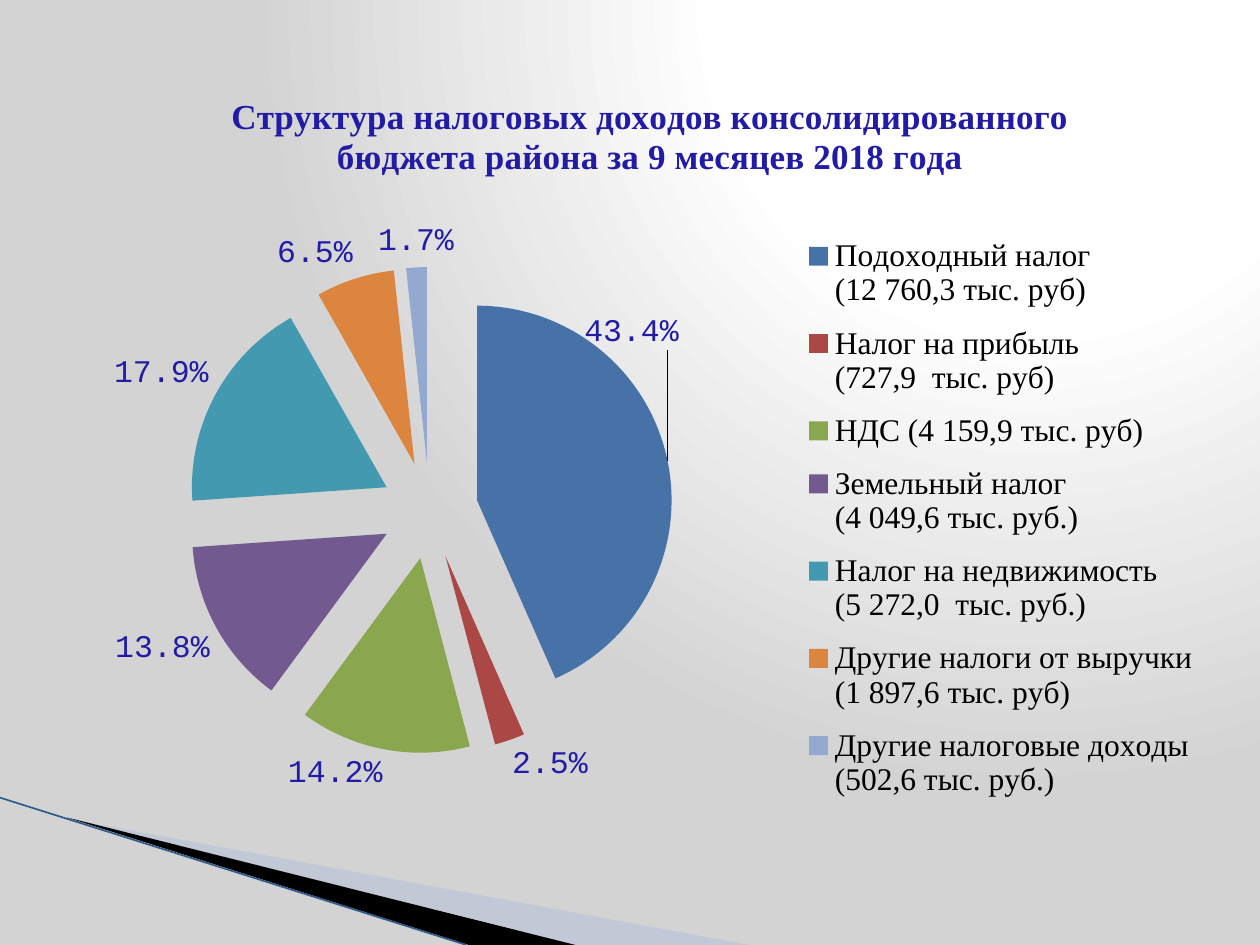
from lxml import etree
from pptx import Presentation
from pptx import util as u
from pptx.chart import data
from pptx.dml import color
from pptx.enum import chart as ch, shapes
from pptx.oxml import parse_xml
from pptx.oxml.ns import nsdecls, qn

TITLE = "Структура налоговых доходов консолидированного бюджета района за 9 месяцев 2018 года"
TAXES = [
    ("Подоходный налог\n(12 760,3 тыс. руб)", 0.434, "4672A8"),
    ("Налог на прибыль\n(727,9  тыс. руб)", 0.025, "AB4744"),
    ("НДС (4 159,9 тыс. руб)", 0.142, "8AA64F"),
    ("Земельный налог\n(4 049,6 тыс. руб.)", 0.138, "725990"),
    ("Налог на недвижимость\n(5 272,0  тыс. руб.)", 0.179, "4299B0"),
    ("Другие налоги от выручки\n(1 897,6 тыс. руб)", 0.065, "DC853E"),
    ("Другие налоговые доходы\n(502,6 тыс. руб.)", 0.017, "93A9CF"),
]
NAVY = "221BA5"
SERIF = "Times New Roman"
MONO = "Courier New"


def rgb(code):
    """Turn a hex string into a colour."""
    return color.RGBColor.from_string(code)


def style(font, name, size, code, bold=False):
    """Set the face, size and colour of a font."""
    font.name, font.size, font.bold = name, u.Pt(size), bold
    font.color.rgb = rgb(code)


def glow(slide):
    """Fill the background with a round white to grey gradient."""
    slide.background.fill.gradient()
    old = slide.background.fill._xPr.find(qn("a:gradFill"))
    stops = "".join(
        f'<a:gs pos="{pos}000"><a:srgbClr val="{code}"/></a:gs>'
        for pos, code in ((0, "FFFFFF"), (40, "FFFFFF"), (100, "D3D3D3")))
    new = parse_xml(
        f'<a:gradFill {nsdecls("a")} rotWithShape="1"><a:gsLst>{stops}</a:gsLst>'
        '<a:path path="circle"><a:fillToRect l="65000" b="98000"/></a:path></a:gradFill>')
    old.getparent().replace(old, new)


def wedge(slide, points, code, alpha=100):
    """Draw a filled outline without a border."""
    spots = [(u.Cm(x), u.Cm(y)) for x, y in points]
    form = slide.shapes.build_freeform(*spots[0])
    form.add_line_segments(spots[1:], close=True)
    shape = form.convert_to_shape()
    shape.shadow.inherit = False
    shape.fill.solid()
    shape.fill.fore_color.rgb = rgb(code)
    shape.line.fill.background()
    if alpha < 100:
        tint = shape._element.spPr.find(".//" + qn("a:srgbClr"))
        etree.SubElement(tint, qn("a:alpha"), val=f"{alpha}000")


def swoosh(slide, left, top, width, height):
    """Draw the corner wedges and their edge line."""
    base = top + height
    wedge(slide, [(left + 1.4, top + 0.43), (left + width, base), (left + 11.58, base)],
          "A7B9DB", 40)
    wedge(slide, [(left + 1.35, top + 0.4), (left + 11.6, base), (left + 9.45, base)],
          "000000")
    edge = slide.shapes.add_connector(
        shapes.MSO_CONNECTOR.STRAIGHT,
        u.Cm(left), u.Cm(top), u.Cm(left + 9.4), u.Cm(base))
    edge.line.color.rgb = rgb("2F5B8C")
    edge.line.width = u.Pt(0.95)
    etree.SubElement(edge._element.spPr, qn("a:effectLst"))


def layout(node, spot, target="", **sides):
    """Place a chart part by fractions of the chart."""
    for old in node.findall(qn("c:layout")):
        node.remove(old)
    inner = f'<c:layoutTarget val="{target}"/>' if target else ""
    modes = "".join(f'<c:{key}Mode val="edge"/>' for key in "xy") if "w" in sides or target else ""
    parts = "".join(f'<c:{key} val="{val}"/>' for key, val in sides.items())
    node.insert(spot, parse_xml(
        f'<c:layout {nsdecls("c")}><c:manualLayout>{inner}{modes}{parts}'
        '</c:manualLayout></c:layout>'))


def label(series):
    """Show the shares outside the slices, the first one moved."""
    tags = series.data_labels
    tags.show_value = True
    tags.number_format, tags.number_format_is_linked = "0.0%", False
    tags.position = ch.XL_LABEL_POSITION.OUTSIDE_END
    style(tags.font, MONO, 18, NAVY)
    first = series.points[0].data_label
    first.position = ch.XL_LABEL_POSITION.OUTSIDE_END
    style(first.font, MONO, 18, NAVY)
    layout(first._dLbl, 1, x=-0.08, y=-0.14)


def pie(slide, left, top, width, height):
    """Add the exploded pie with its title and legend."""
    table = data.CategoryChartData(number_format="0.0%")
    table.categories = [name for name, _, _ in TAXES]
    table.add_series("Series 1", [share for _, share, _ in TAXES])
    frame = slide.shapes.add_chart(
        ch.XL_CHART_TYPE.PIE, u.Cm(left), u.Cm(top), u.Cm(width), u.Cm(height), table)
    chart = frame.chart
    style(chart.font, MONO, 18, "000000")

    chart.has_title = True
    head = chart.chart_title
    head.text_frame.text = TITLE
    style(head.text_frame.paragraphs[0].runs[0].font, SERIF, 20, NAVY, True)

    chart.has_legend = True
    key = chart.legend
    key.position = ch.XL_LEGEND_POSITION.RIGHT
    key.include_in_layout = False
    style(key.font, SERIF, 18, "000000")
    layout(key._element, 1, x=0.63, y=0.2, w=0.36, h=0.77)

    plot = chart.plots[0]
    plot.vary_by_categories = True
    layout(plot._element.getparent(), 0, "inner", x=0.09, y=0.26, w=0.43, h=0.63)
    series = plot.series[0]
    for spot, (_, _, code) in enumerate(TAXES):
        fill = series.points[spot].format.fill
        fill.solid()
        fill.fore_color.rgb = rgb(code)
    burst = parse_xml(f'<c:explosion {nsdecls("c")} val="25"/>')
    series._element.find(qn("c:dPt")).addprevious(burst)
    label(series)


def main():
    """Build the slide and save it."""
    deck = Presentation()
    deck.slide_width, deck.slide_height = u.Cm(25.4), u.Cm(19.05)
    slide = deck.slides.add_slide(deck.slide_layouts[6])
    glow(slide)
    swoosh(slide, 0, 16.08, 15.1, 2.97)
    pie(slide, 1.7, 1.32, 22.81, 15.6)
    deck.save("out.pptx")


if __name__ == "__main__":
    main()
